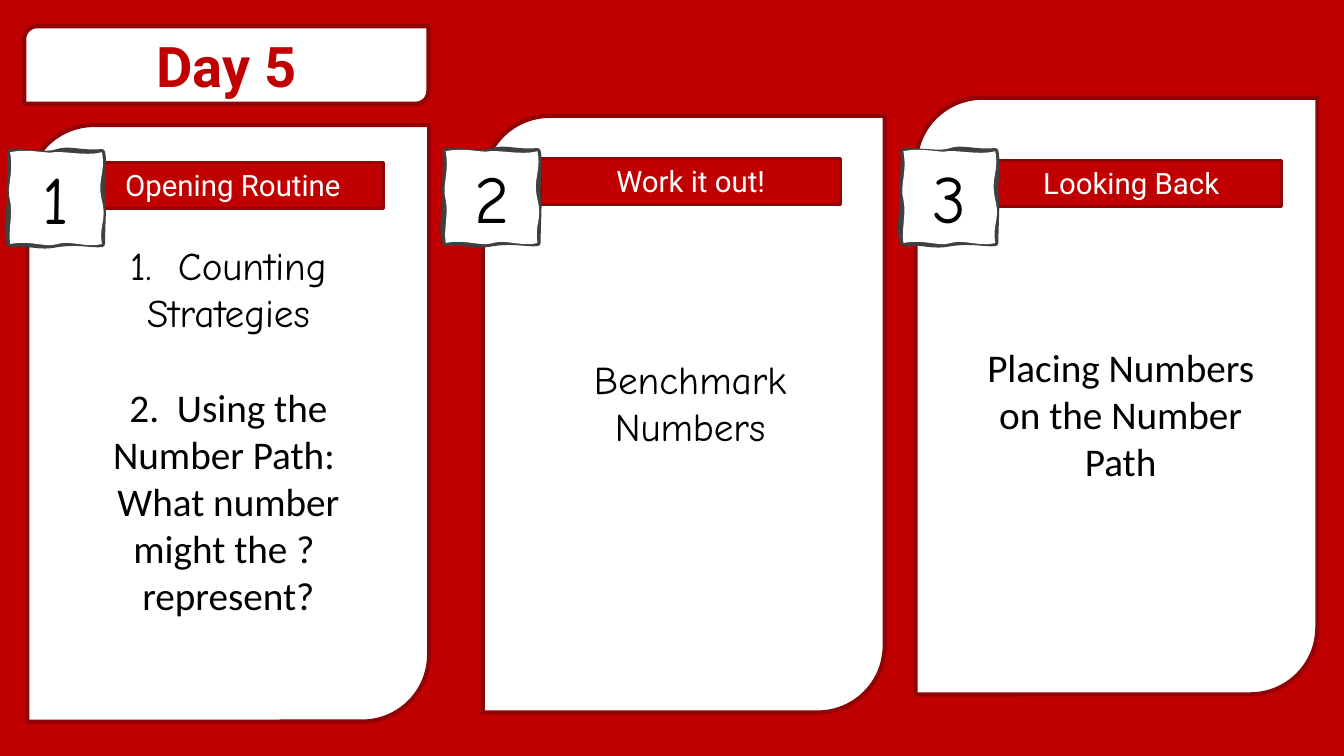
import pptx
import pptx.dml.color
import pptx.enum.shapes
import pptx.enum.text
import pptx.oxml.ns
import pptx.util
from lxml import etree

RGBColor = pptx.dml.color.RGBColor
RED = RGBColor(0xC0, 0x00, 0x00)
DARK_RED = RGBColor(0x92, 0x03, 0x05)
WHITE = RGBColor(0xFF, 0xFF, 0xFF)
BLACK = RGBColor(0x00, 0x00, 0x00)
GREY = RGBColor(0x40, 0x40, 0x40)

SLIDE_WIDTH = pptx.util.Inches(13.33)
SLIDE_HEIGHT = pptx.util.Inches(7.5)
SHAPES = pptx.enum.shapes.MSO_SHAPE
ANCHOR = pptx.enum.text.MSO_ANCHOR

# Corners and sizes as percentages of the slide
TITLE_CORNER, TITLE_SIZE = (1.8, 3.47), (30.08, 10.27)
CARD_SIZE = (29.9, 78.93)
HEADER_SIZE = (22.36, 6.13)
BADGE_SIZE = (6.83, 12.13)
TEXT_WIDTH = 23.93

# Hand-drawn square: cubic curves (two controls and an end) from the origin
BADGE_UNITS = 91
BADGE_OUTLINE = [
    ((14, -1), (37, 4), (47, 0)), ((58, -4), (71, 2), (91, 0)),
    ((94, 15), (90, 34), (91, 43)), ((93, 52), (91, 70), (91, 91)),
    ((80, 92), (68, 88), (47, 91)), ((27, 95), (23, 89), (0, 91)),
    ((-5, 79), (0, 57), (0, 47)), ((-1, 37), (1, 10), (0, 0)),
]
BADGE_FACE = [
    ((20, -4), (35, 2), (44, 0)), ((54, -1), (77, 4), (91, 0)),
    ((95, 21), (86, 26), (91, 48)), ((96, 69), (88, 71), (91, 91)),
    ((75, 95), (59, 87), (47, 91)), ((35, 95), (21, 87), (0, 91)),
    ((-2, 76), (3, 62), (0, 48)), ((-4, 34), (4, 22), (0, 0)),
]

# Card, header and badge corners of each column
COLUMNS = [
    ("1", "Opening Routine", (2.03, 16.53), (6.15, 21.47), (0.75, 20.13)),
    ("2", "Work it out!", (35.93, 15.33), (40.21, 20.93), (33.16, 20)),
    ("3", "Looking Back", (68.12, 12.93), (72.99, 21.2), (67.22, 20)),
]


def across(percent):
    return round(SLIDE_WIDTH * percent / 100)


def down(percent):
    return round(SLIDE_HEIGHT * percent / 100)


def box(corner, size):
    return across(corner[0]), down(corner[1]), across(size[0]), down(size[1])


def add_element(parent, tag, **attributes):
    return etree.SubElement(parent, pptx.oxml.ns.qn(tag), **attributes)


def move_to_front(slide, shape, corner, size):
    shape.left, shape.top, shape.width, shape.height = box(corner, size)
    slide.shapes.element.append(shape.element)


def paint(shape, fill, line, width):
    shape.shadow.inherit = False
    shape.fill.solid()
    shape.fill.fore_color.rgb = fill
    shape.line.color.rgb = line
    shape.line.width = pptx.util.Pt(width)


def write(shape, lines, size, color, anchor, bold=False, gap=0):
    """Fill a shape with centred paragraphs given as (text, font) pairs."""
    frame = shape.text_frame
    frame.word_wrap = True
    frame.auto_size = pptx.enum.text.MSO_AUTO_SIZE.NONE
    frame.vertical_anchor = anchor
    for index, (text, font) in enumerate(lines):
        paragraph = frame.add_paragraph() if index else frame.paragraphs[0]
        paragraph.alignment = pptx.enum.text.PP_ALIGN.CENTER
        paragraph.space_before = pptx.util.Pt(gap if index else 0)
        run = paragraph.add_run()
        run.text = text
        run.font.name = font
        run.font.size = pptx.util.Pt(size)
        run.font.bold = bold
        run.font.color.rgb = color


def add_panel(slide, kind, corner, size, fill, width):
    shape = slide.shapes.add_shape(kind, *box(corner, size))
    paint(shape, fill, DARK_RED, width)
    return shape


def add_header(slide, corner, text):
    header = add_panel(slide, SHAPES.RECTANGLE, corner, HEADER_SIZE, RED, 2.25)
    write(header, [(text, "Roboto")], 21, WHITE, ANCHOR.TOP)


def add_curves(outlines, curves, **attributes):
    units = str(BADGE_UNITS)
    outline = add_element(outlines, "a:path", w=units, h=units, **attributes)
    add_element(add_element(outline, "a:moveTo"), "a:pt", x="0", y="0")
    for curve in curves:
        bezier = add_element(outline, "a:cubicBezTo")
        for x, y in curve:
            add_element(bezier, "a:pt", x=str(x), y=str(y))
    add_element(outline, "a:close")


def add_badge(slide, corner, number):
    left, top, width, _ = box(corner, BADGE_SIZE)
    builder = slide.shapes.build_freeform(0, 0, scale=width / BADGE_UNITS)
    builder.add_line_segments(
        [(BADGE_UNITS, 0), (BADGE_UNITS, BADGE_UNITS), (0, BADGE_UNITS)])
    badge = builder.convert_to_shape(left, top)
    # Bend the square's sides: a stroked outline below a filled face
    outlines = badge.element.spPr.find(".//" + pptx.oxml.ns.qn("a:pathLst"))
    outlines.clear()
    add_curves(outlines, BADGE_OUTLINE, fill="none")
    add_curves(outlines, BADGE_FACE, stroke="0")
    paint(badge, WHITE, GREY, 4.5)
    write(badge, [(number, "Comic Neue")], 48, BLACK, ANCHOR.TOP)


def add_activity(slide, corner, height, text, font):
    activity = slide.shapes.add_textbox(*box(corner, (TEXT_WIDTH, height)))
    write(activity, [(text, font)], 28, BLACK, ANCHOR.MIDDLE)


def add_title(slide, text):
    add_panel(slide, SHAPES.ROUND_2_DIAG_RECTANGLE, TITLE_CORNER, TITLE_SIZE,
              WHITE, 3)
    title = slide.shapes.title
    move_to_front(slide, title, TITLE_CORNER, TITLE_SIZE)
    write(title, [(text, "Roboto")], 40, RED, ANCHOR.MIDDLE, bold=True)


def add_list(slide, lines):
    body = slide.placeholders[1]
    move_to_front(slide, body, (5.03, 31.07), (TEXT_WIDTH, 51.6))
    write(body, lines, 28, BLACK, ANCHOR.MIDDLE, gap=34)
    for paragraph in body.text_frame.paragraphs:
        properties = paragraph._p.get_or_add_pPr()
        properties.set("marL", "0")
        properties.set("indent", "0")
        add_element(properties, "a:buNone")


def main():
    presentation = pptx.Presentation()
    presentation.slide_width = SLIDE_WIDTH
    presentation.slide_height = SLIDE_HEIGHT
    slide = presentation.slides.add_slide(presentation.slide_layouts[1])
    slide.background.fill.solid()
    slide.background.fill.fore_color.rgb = RED

    # Columns
    for number, heading, card, header, badge in COLUMNS:
        add_panel(slide, SHAPES.ROUND_2_DIAG_RECTANGLE, card, CARD_SIZE, WHITE, 3)
        add_header(slide, header, heading)
        add_badge(slide, badge, number)

    # Title
    add_title(slide, "Day 5")

    # Activities
    add_activity(slide, (39.38, 46.27), 13.87, "Benchmark Numbers", "Comic Neue")
    add_activity(slide, (71.42, 44.67), 20.13,
                 "Placing Numbers on the Number Path", "Calibri")
    add_list(slide, [
        ("1.  Counting Strategies", "Comic Neue"),
        ("2.  Using the Number Path:  What number might the ?  represent?",
         "Calibri"),
    ])

    presentation.save("out.pptx")


if __name__ == "__main__":
    main()
